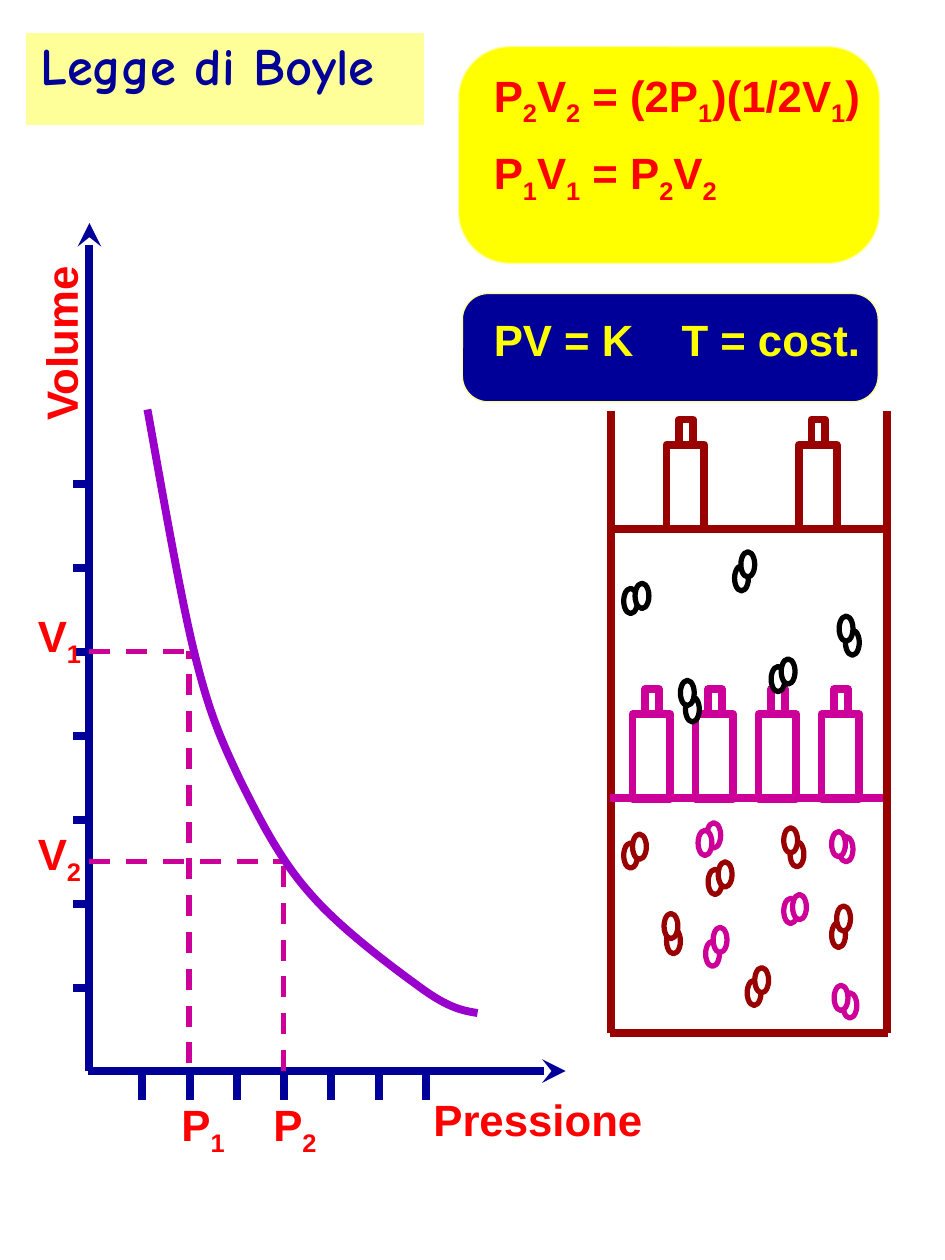
from lxml import etree
from pptx import Presentation
from pptx.dml.color import RGBColor
from pptx.enum import dml, shapes, text
from pptx.oxml.ns import qn
from pptx.util import Inches, Pt

NAVY = RGBColor(0x00, 0x00, 0x99)
RED = RGBColor(0xFF, 0x00, 0x00)
YELLOW = RGBColor(0xFF, 0xFF, 0x00)
CREAM = RGBColor(0xFF, 0xFF, 0x99)
MAGENTA = RGBColor(0xCC, 0x00, 0x99)
MAROON = RGBColor(0x99, 0x00, 0x00)
PURPLE = RGBColor(0x99, 0x00, 0xCC)
BLACK = RGBColor(0x00, 0x00, 0x00)
WHITE = RGBColor(0xFF, 0xFF, 0xFF)

SHAPE = shapes.MSO_SHAPE
AXIS_X, AXIS_Y = 0.71, 8.5
P1, P2 = 1.5, 2.25
V1, V2 = 5.17, 6.84

# Start point, then three points for each Bezier segment
CURVE = [(1.17, 3.25),
         (1.23, 3.57), (1.42, 4.69), (1.54, 5.17),
         (1.66, 5.66), (1.75, 5.86), (1.9, 6.18),
         (2.06, 6.5), (2.22, 6.82), (2.46, 7.09),
         (2.7, 7.37), (3.12, 7.68), (3.34, 7.84),
         (3.56, 8), (3.67, 8.02), (3.79, 8.04)]

# Two atoms for each molecule, the rear one first
MOLECULES = {
    MAROON: [((5.29, 7.37), (5.27, 7.25)), ((4.95, 6.69), (5.02, 6.62)),
             ((6.27, 6.68), (6.22, 6.57)), ((5.93, 7.78), (5.99, 7.68)),
             ((6.6, 7.32), (6.64, 7.19)), ((5.62, 6.9), (5.7, 6.84))],
    MAGENTA: [((5.61, 6.53), (5.54, 6.59)), ((5.6, 7.47), (5.66, 7.36)),
              ((6.22, 7.13), (6.29, 7.1)), ((6.69, 7.88), (6.62, 7.82)),
              ((6.66, 6.64), (6.6, 6.6))],
    BLACK: [((4.95, 4.67), (5.04, 4.63)), ((5.44, 5.53), (5.4, 5.4)),
            ((6.71, 5), (6.66, 4.89)), ((6.12, 5.29), (6.2, 5.23)),
            ((5.83, 4.49), (5.88, 4.38))],
}


def add_line(s, x1, y1, x2, y2, color, width=4.5, dashed=False, arrow=False):
    ln = s.shapes.add_connector(shapes.MSO_CONNECTOR.STRAIGHT, Inches(x1),
                                Inches(y1), Inches(x2), Inches(y2))
    ln.line.color.rgb = color
    ln.line.width = Pt(width)
    if dashed:
        ln.line.dash_style = dml.MSO_LINE.DASH
    if arrow:
        etree.SubElement(ln.line._get_or_add_ln(), qn("a:tailEnd"), type="stealth")
    etree.SubElement(ln._element.spPr, qn("a:effectLst"))


def add_box(parent, kind, x, y, w, h, line, width, fill=None):
    sp = parent.shapes.add_shape(kind, Inches(x), Inches(y), Inches(w), Inches(h))
    sp.shadow.inherit = False
    if fill is None:
        sp.fill.background()
    else:
        sp.fill.solid()
        sp.fill.fore_color.rgb = fill
    sp.line.color.rgb = line
    sp.line.width = Pt(width)
    return sp


def add_panel(s, kind, x, y, w, h, fill):
    sp = add_box(s, kind, x, y, w, h, CREAM, 0.75, fill)
    if kind == SHAPE.ROUNDED_RECTANGLE:
        sp.adjustments[0] = 0.238


def add_run(p, content, font, size, color, subscript=False):
    r = p.add_run()
    r.text = content
    r.font.name, r.font.size, r.font.bold = font, Pt(size), True
    r.font.color.rgb = color
    if subscript:
        r._r.get_or_add_rPr().set("baseline", "-25000")


def add_text(s, x, y, w, h, lines, color=RED, font="Arial", size=25,
             spacing=None, rotation=0, tab=None):
    """Place lines of text; an underscore lowers the character after it."""
    sp = s.shapes.add_textbox(Inches(x), Inches(y), Inches(w), Inches(h))
    sp.rotation = rotation
    tf = sp.text_frame
    tf.word_wrap = False
    tf.auto_size = text.MSO_AUTO_SIZE.SHAPE_TO_FIT_TEXT
    tf.margin_left = tf.margin_right = Inches(0.06)
    tf.margin_top = tf.margin_bottom = Inches(0.03)
    for i, line in enumerate(lines):
        p = tf.add_paragraph() if i else tf.paragraphs[0]
        if spacing:
            p.line_spacing = spacing
        if tab:
            tabs = etree.SubElement(p._p.get_or_add_pPr(), qn("a:tabLst"))
            etree.SubElement(tabs, qn("a:tab"), pos=str(Inches(tab)), algn="l")
        first, *rest = line.split("_")
        add_run(p, first, font, size, color)
        for part in rest:
            add_run(p, part[0], font, size, color, subscript=True)
            if part[1:]:
                add_run(p, part[1:], font, size, color)


def add_curve(s, points, color):
    emu = [(Inches(x), Inches(y)) for x, y in points]
    builder = s.shapes.build_freeform(*emu[0])
    builder.add_line_segments(emu[1:], close=False)
    sp = builder.convert_to_shape()
    sp.shadow.inherit = False
    sp.fill.background()
    sp.line.color.rgb = color
    sp.line.width = Pt(4.5)
    # Turn each three straight steps into one Bezier segment
    outline = next(sp._element.iter(qn("a:path")))
    steps = outline.findall(qn("a:lnTo"))
    for i in range(0, len(steps), 3):
        bezier = etree.SubElement(outline, qn("a:cubicBezTo"))
        for step in steps[i:i + 3]:
            bezier.append(step[0])
            outline.remove(step)


def add_weight(s, x, floor, color):
    group = s.shapes.add_group_shape()
    add_box(group, SHAPE.RECTANGLE, x, floor - 0.67, 0.3, 0.67, color, 4.5)
    add_box(group, SHAPE.RECTANGLE, x + 0.1, floor - 0.87, 0.11, 0.2, color, 4.5)


def add_molecule(s, atoms, color):
    for x, y in atoms:
        add_box(s, SHAPE.OVAL, x, y, 0.11, 0.2, color, 3, WHITE)


def add_graph(s):
    # Axes and ticks
    add_line(s, AXIS_X, AXIS_Y, AXIS_X, 1.77, NAVY, arrow=True)
    add_line(s, 0.7, AXIS_Y, 4.49, AXIS_Y, NAVY, arrow=True)
    for i in range(7):
        y = 3.84 + i * 4 / 6
        add_line(s, 0.58, y, AXIS_X, y, NAVY)
        x = 1.13 + i * 0.375
        add_line(s, x, AXIS_Y, x, 8.73, NAVY)
    # Guides to the two states
    for x, y, bottom in ((P1, V1, 8.44), (P2, V2, AXIS_Y)):
        add_line(s, x, bottom, x, y, MAGENTA, 3, dashed=True)
        add_line(s, AXIS_X, y, x, y, MAGENTA, 3, dashed=True)
    add_curve(s, CURVE, PURPLE)
    # Axis labels
    add_text(s, 3.38, 8.64, 1.8, 0.48, ["Pressione"])
    add_text(s, -0.2, 2.48, 1.36, 0.48, ["Volume"], rotation=270)
    for x, y, label in ((0.24, 4.8, "V_1"), (0.24, 6.53, "V_2"),
                        (1.38, 8.68, "P_1"), (2.11, 8.68, "P_2")):
        add_text(s, x, y, 0.49, 0.48, [label])


def add_cylinder(s):
    # Walls, pistons and weights
    add_line(s, 4.85, 8.2, 4.85, 3.26, MAROON)
    add_line(s, 4.84, 6.33, 7.05, 6.33, MAGENTA)
    for x in (5.29, 6.34):
        add_weight(s, x, 4.2, MAROON)
    for i in range(4):
        add_weight(s, 5.02 + i * 0.5, 6.34, MAGENTA)
    for y in (4.2, 8.2):
        add_line(s, 4.84, y, 7.05, y, MAROON)
    add_line(s, 7.04, 8.2, 7.04, 3.26, MAROON)
    # Gas
    for color, molecules in MOLECULES.items():
        for atoms in molecules:
            add_molecule(s, atoms, color)


def main():
    prs = Presentation()
    prs.slide_width, prs.slide_height = Inches(7.5), Inches(10)
    s = prs.slides.add_slide(prs.slide_layouts[6])

    # Panels behind the title and the equations
    add_panel(s, SHAPE.ROUNDED_RECTANGLE, 3.64, 0.37, 3.34, 1.72, YELLOW)
    add_panel(s, SHAPE.RECTANGLE, 0.21, 0.27, 3.15, 0.72, CREAM)
    add_panel(s, SHAPE.ROUNDED_RECTANGLE, 3.67, 2.33, 3.3, 0.86, NAVY)

    add_graph(s)
    add_cylinder(s)

    # Title and equations
    add_text(s, 3.86, 0.37, 3.13, 1.13,
             ["P_2V_2 = (2P_1)(1/2V_1)", "P_1V_1 = P_2V_2"], spacing=1.3)
    add_text(s, 0.26, 0.23, 3.07, 0.57, ["Legge di Boyle"], NAVY, "Comic Neue", 30)
    add_text(s, 3.86, 2.33, 3.06, 0.59, ["PV = K\tT = cost."], YELLOW,
             spacing=1.3, tab=1.49)

    prs.save("out.pptx")


if __name__ == "__main__":
    main()
